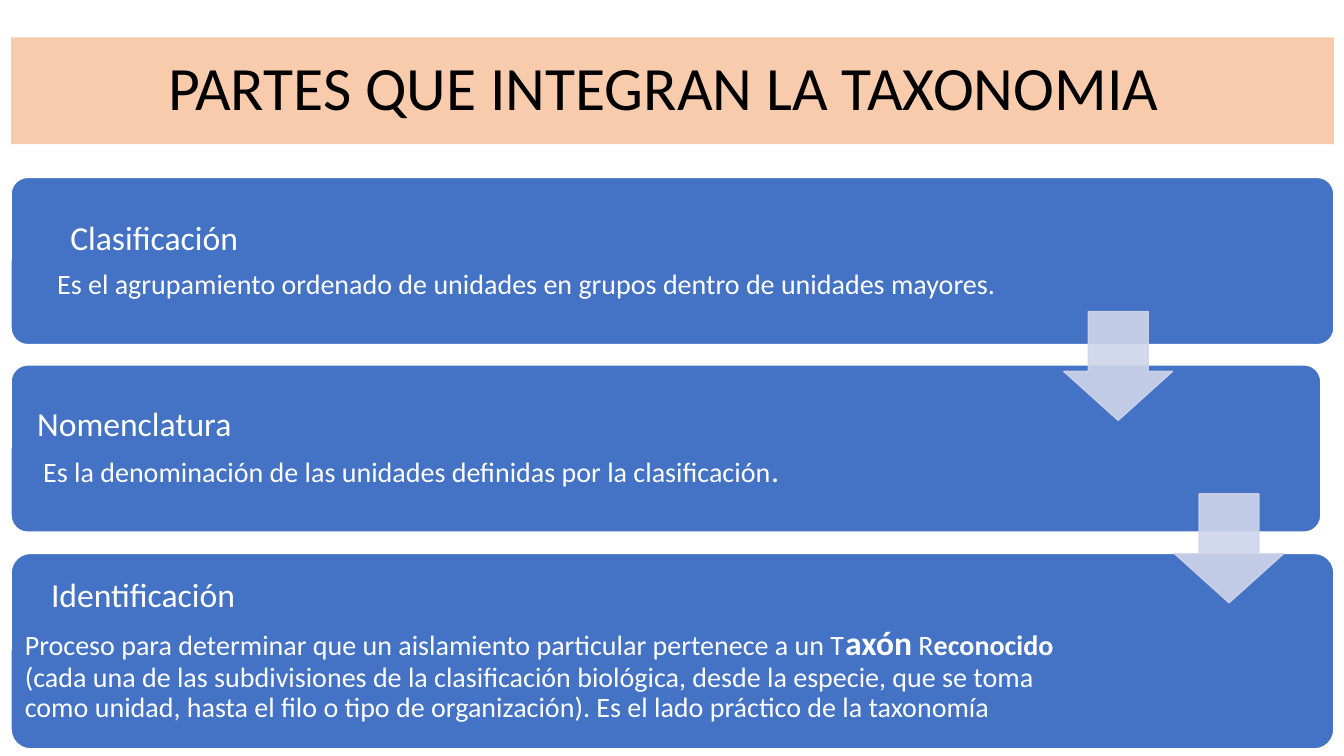
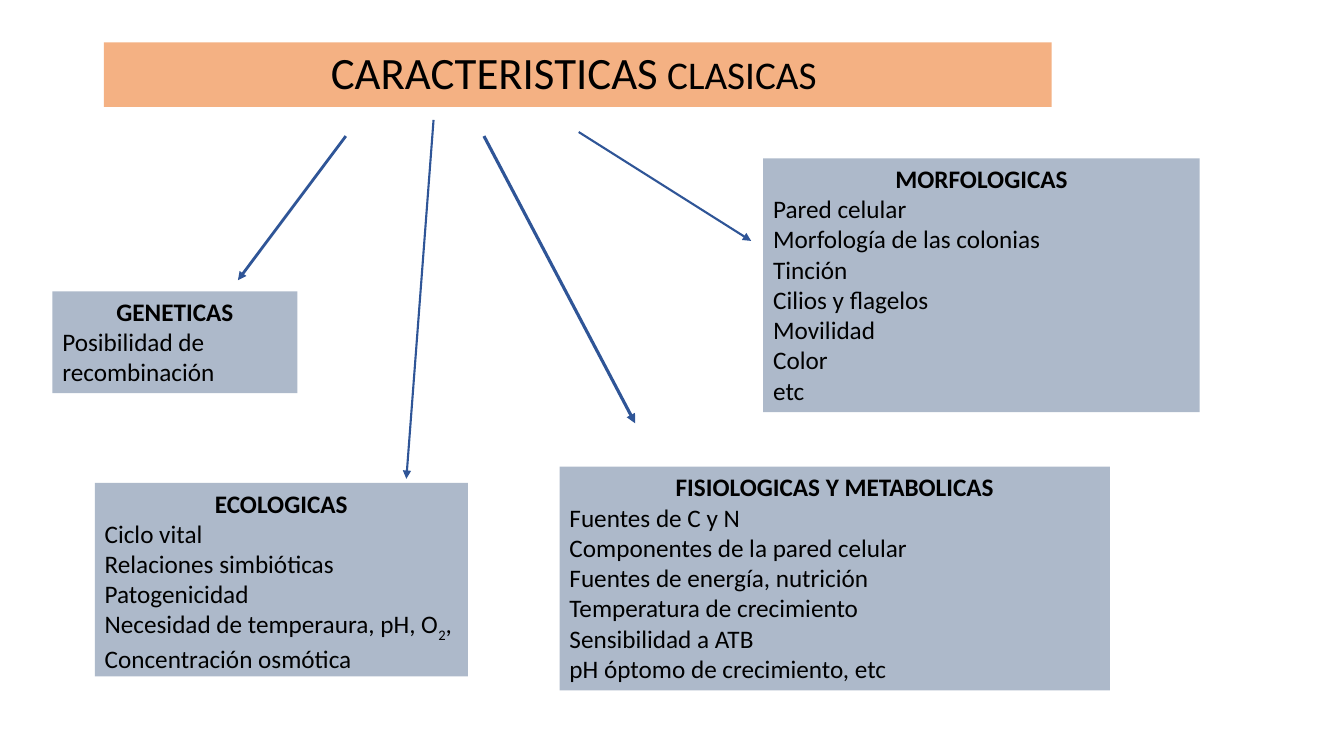
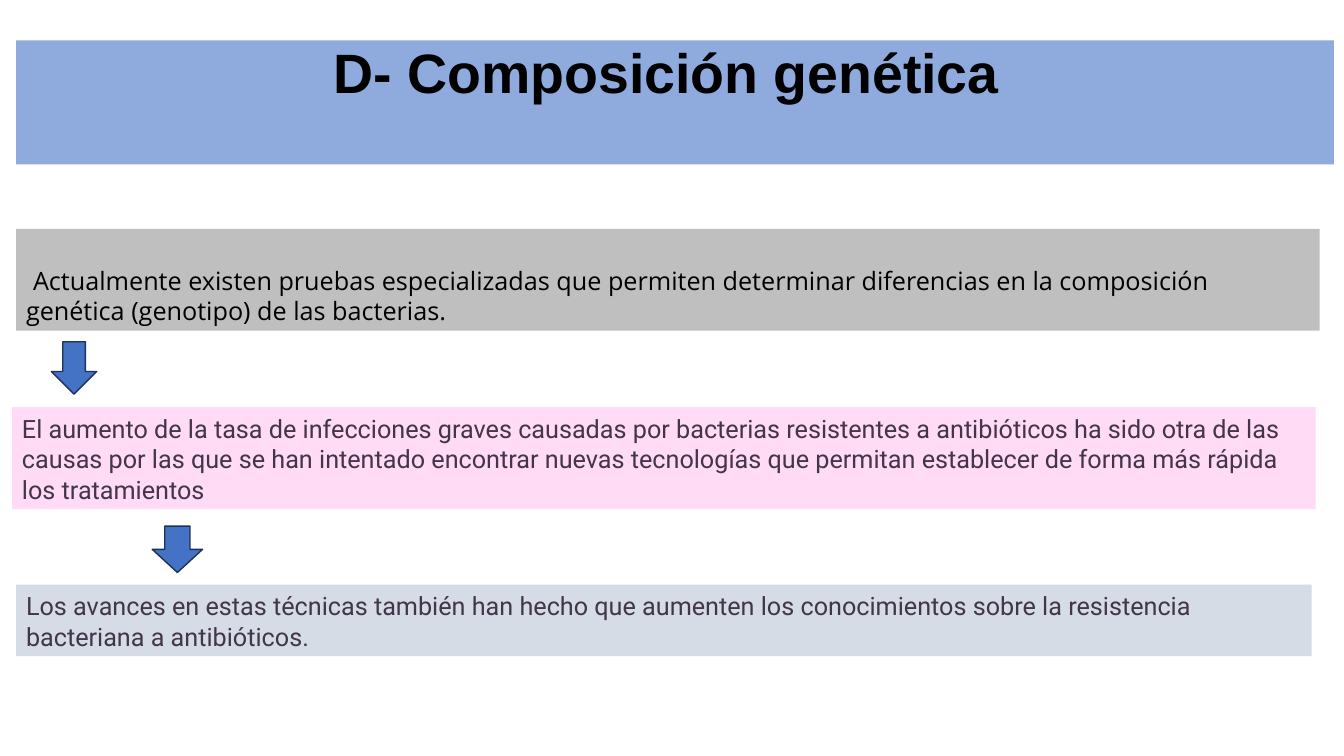
"""Build three slides on bacterial taxonomy."""
from lxml.etree import SubElement
from pptx import Presentation
from pptx.dml.color import RGBColor
from pptx.enum.shapes import MSO_CONNECTOR, MSO_SHAPE
from pptx.enum.text import MSO_ANCHOR, MSO_AUTO_SIZE, PP_ALIGN
from pptx.oxml.ns import qn
from pptx.util import Inches, Pt

BLACK = RGBColor(0x00, 0x00, 0x00)
WHITE = RGBColor(0xFF, 0xFF, 0xFF)
BLUE = RGBColor(0x44, 0x72, 0xC4)
NAVY = RGBColor(0x1E, 0x32, 0x56)
ARROW_BLUE = RGBColor(0x2F, 0x55, 0x97)
PALE_BLUE = RGBColor(0xCF, 0xD5, 0xEA)
SKY = RGBColor(0x8F, 0xAA, 0xDC)
PEACH = RGBColor(0xF8, 0xCB, 0xAD)
ORANGE = RGBColor(0xF4, 0xB1, 0x83)
SLATE = RGBColor(0xAD, 0xB9, 0xCA)
GRAY = RGBColor(0xBF, 0xBF, 0xBF)
PINK = RGBColor(0xFF, 0xDB, 0xF6)
MIST = RGBColor(0xD6, 0xDC, 0xE5)
PLUM = RGBColor(0x43, 0x35, 0x4B)

PARTS = [
    {"place": (0.11, 1.76, 13.12, 1.66), "inset": 0.1, "right": 2.1,
     "heading": ("Clasificación", 0.44), "indent": 0.31,
     "spans": [("Es el agrupamiento ordenado de unidades en grupos dentro de "
                "unidades mayores.", 20, False)]},
    {"place": (0.11, 3.62, 12.99, 1.66), "inset": 0.08, "right": 2.48,
     "heading": ("Nomenclatura", 0.13), "indent": 0.19,
     "spans": [("Es la denominación de las unidades definidas por la "
                "clasificación", 20, False), (".", 23, False)]},
    {"place": (0.11, 5.49, 13.12, 1.94), "inset": 0.08, "right": 2.53,
     "heading": ("Identificación", 0.26), "indent": 0,
     "spans": [("Proceso para determinar que un aislamiento particular "
                "pertenece a un T", 20, False),
               ("axón", 24, True), (" R", 20, False), ("econocido", 20, True),
               (" (cada una de las subdivisiones de la clasificación biológica, "
                "desde la especie, que se toma como unidad, hasta el filo o tipo "
                "de organización). Es el lado práctico de la taxonomía",
                20, False)]},
]
PART_ARROWS = [(10.55, 3.09, 1.08, 1.08), (11.65, 4.9, 1.08, 1.08)]

TRAITS = [
    ("GENETICAS", (0.52, 2.89, 2.43, 1.01), ["Posibilidad de recombinación"]),
    ("MORFOLOGICAS", (7.57, 1.57, 4.33, 2.52),
     ["Pared celular", "Morfología de las colonias", "Tinción",
      "Cilios y flagelos", "Movilidad", "Color", "etc"]),
    ("FISIOLOGICAS Y METABOLICAS", (5.55, 4.63, 5.46, 2.22),
     ["Fuentes de C y N", "Componentes de la pared celular",
      "Fuentes de energía, nutrición", "Temperatura de crecimiento",
      "Sensibilidad a ATB", "pH óptomo de crecimiento, etc"]),
    ("ECOLOGICAS", (0.94, 4.79, 3.7, 1.92),
     ["Ciclo vital", "Relaciones simbióticas Patogenicidad",
      ("Necesidad de temperaura, pH, O", "2", ", Concentración osmótica")]),
]
TRAIT_ARROWS = [
    ((3.43, 1.35), (2.36, 2.78), 2),
    ((5.74, 1.31), (7.45, 2.39), 1.5),
    ((4.8, 1.35), (6.3, 4.2), 2.25),
    ((4.3, 1.19), (4.03, 4.75), 1.5),
]

STATEMENTS = [
    ((0.16, 2.27, 12.93, 1.01), GRAY, "Open Sans", BLACK, 0.07,
     "Actualmente existen pruebas especializadas que permiten determinar "
     "diferencias en la composición genética (genotipo) de las bacterias."),
    ((0.12, 4.04, 12.93, 1.01), PINK, "Roboto", PLUM, 0,
     "El aumento de la tasa de infecciones graves causadas por bacterias "
     "resistentes a antibióticos ha sido otra de las causas por las que se han "
     "intentado encontrar nuevas tecnologías que permitan establecer de forma "
     "más rápida los tratamientos"),
    ((0.16, 5.8, 12.85, 0.71), MIST, "Roboto", PLUM, 0,
     "Los avances en estas técnicas también han hecho que aumenten los "
     "conocimientos sobre la resistencia bacteriana a antibióticos."),
]
STATEMENT_ARROWS = [(0.51, 3.39, 0.45, 0.52), (1.51, 5.22, 0.5, 0.46)]


def add_span(para, text, size, bold=False, color=BLACK, font="Calibri"):
    span = para.add_run()
    span.text = text
    span.font.name = font
    span.font.size = Pt(size)
    span.font.bold = bold
    span.font.color.rgb = color
    return span


def next_paragraph(frame, align=PP_ALIGN.LEFT, left=0, first=0):
    para = frame.paragraphs[0]
    if para.runs:
        para = frame.add_paragraph()
    para.alignment = align
    properties = para._p.get_or_add_pPr()
    properties.set("marL", str(Inches(left)))
    properties.set("indent", str(Inches(first)))
    return para


def add_title(page, place, fill, spans, anchor, shift, font="Calibri", bold=False):
    title = page.shapes.title
    title.left, title.top, title.width, title.height = map(Inches, place)
    title.fill.solid()
    title.fill.fore_color.rgb = fill
    frame = title.text_frame
    frame.auto_size = MSO_AUTO_SIZE.NONE
    frame.word_wrap = True
    frame.vertical_anchor = anchor
    frame.margin_right = Inches(0.1 + shift)
    para = next_paragraph(frame, PP_ALIGN.CENTER)
    para.line_spacing = 0.9
    for text, size in spans:
        add_span(para, text, size, bold, font=font)


def add_block(page, kind, place, fill, line=None):
    block = page.shapes.add_shape(kind, *map(Inches, place))
    block.shadow.inherit = False
    block.fill.solid()
    block.fill.fore_color.rgb = fill
    if line is None:
        block.line.fill.background()
    else:
        block.line.color.rgb = line
        block.line.width = Pt(1)
    block.text_frame.word_wrap = True
    block.text_frame.vertical_anchor = MSO_ANCHOR.TOP
    return block


def add_arrow(page, start, end, width):
    arrow = page.shapes.add_connector(
        MSO_CONNECTOR.STRAIGHT, *map(Inches, start + end))
    arrow.line.color.rgb = ARROW_BLUE
    arrow.line.width = Pt(width)
    SubElement(arrow.line._get_or_add_ln(), qn("a:tailEnd"), type="triangle")
    SubElement(arrow._element.spPr, qn("a:effectLst"))


def build_parts(page):
    add_title(page, (0.11, 0.37, 13.12, 1.06), PEACH,
              [("PARTES QUE INTEGRAN LA TAXONOMIA", 44)], MSO_ANCHOR.MIDDLE, 0.17)
    for part in PARTS:
        panel = add_block(page, MSO_SHAPE.ROUNDED_RECTANGLE, part["place"],
                          BLUE, WHITE)
        panel.adjustments[0] = 0.1
        frame = panel.text_frame
        frame.vertical_anchor = MSO_ANCHOR.MIDDLE
        frame.margin_left = frame.margin_top = frame.margin_bottom = Inches(
            part["inset"])
        frame.margin_right = Inches(part["right"])
        heading, heading_indent = part["heading"]
        for indent, gap, spans in (
                (heading_indent, 8.4, [(heading, 24, False)]),
                (part["indent"], 7, part["spans"])):
            para = next_paragraph(frame, left=indent)
            para.line_spacing = 0.9
            para.space_after = Pt(gap)
            for text, size, bold in spans:
                add_span(para, text, size, bold, WHITE)
    for place in PART_ARROWS:
        arrow = add_block(page, MSO_SHAPE.DOWN_ARROW, place, PALE_BLUE, PALE_BLUE)
        arrow.adjustments[0] = 0.55
        arrow.adjustments[1] = 0.45
        for color in arrow._element.spPr.iter(qn("a:srgbClr")):
            SubElement(color, qn("a:alpha"), val="90000")


def build_traits(page):
    add_title(page, (1.03, 0.42, 9.4, 0.64), ORANGE,
              [("CARACTERISTICAS", 32), (" CLASICAS", 28)], MSO_ANCHOR.MIDDLE, 0.08)
    for heading, place, items in TRAITS:
        frame = add_block(page, MSO_SHAPE.RECTANGLE, place, SLATE).text_frame
        add_span(next_paragraph(frame, PP_ALIGN.CENTER), heading, 18, True)
        for item in items:
            para = next_paragraph(frame)
            if isinstance(item, str):
                add_span(para, item, 18)
            else:
                before, subscript, after = item
                add_span(para, before, 18)
                span = add_span(para, subscript, 18)
                span._r.get_or_add_rPr().set("baseline", "-25000")
                add_span(para, after, 18)
    for start, end, width in TRAIT_ARROWS:
        add_arrow(page, start, end, width)


def build_genetics(page):
    add_title(page, (0.16, 0.4, 13.07, 1.23), SKY,
              [("D- Composición genética", 39.6)], MSO_ANCHOR.TOP, 0.17,
              "Arial", True)
    for place, fill, font, color, first, text in STATEMENTS:
        frame = add_block(page, MSO_SHAPE.RECTANGLE, place, fill).text_frame
        frame.vertical_anchor = MSO_ANCHOR.BOTTOM
        add_span(next_paragraph(frame, first=first), text, 18, False, color, font)
    for place in STATEMENT_ARROWS:
        add_block(page, MSO_SHAPE.DOWN_ARROW, place, BLUE, NAVY)


def main():
    deck = Presentation()
    deck.slide_width = Inches(13.33)
    deck.slide_height = Inches(7.5)
    for build in (build_parts, build_traits, build_genetics):
        build(deck.slides.add_slide(deck.slide_layouts[5]))
    deck.save("out.pptx")


if __name__ == "__main__":
    main()
